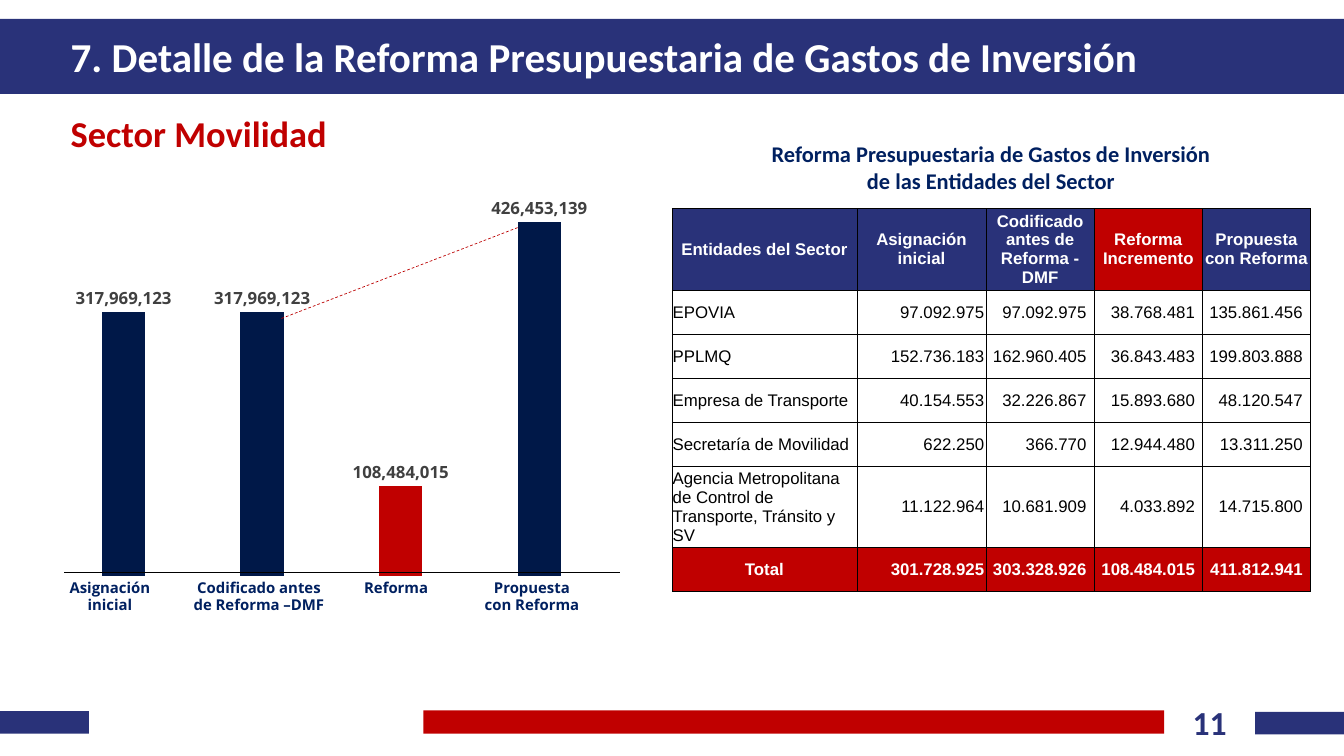
from dataclasses import dataclass

import lxml.etree
import pptx
import pptx.chart.data
import pptx.dml.color
import pptx.enum.chart
import pptx.enum.dml
import pptx.enum.shapes
import pptx.enum.text
import pptx.oxml.ns
import pptx.util

ALIGN = pptx.enum.text.PP_ALIGN
MID = pptx.enum.text.MSO_ANCHOR.MIDDLE
TOP = pptx.enum.text.MSO_ANCHOR.TOP
qn = pptx.oxml.ns.qn


@dataclass(frozen=True)
class Theme:
    navy: str = "293279"
    red: str = "C00000"
    bar: str = "001848"
    ink: str = "002060"
    dash: str = "BC0000"
    gray: str = "404040"
    black: str = "000000"
    white: str = "FFFFFF"
    title: int = 44
    sector: int = 39
    page: int = 36
    head: int = 24
    cell: int = 18
    label: int = 16


@dataclass(frozen=True)
class Box:
    x: int
    y: int
    w: int
    h: int


@dataclass(frozen=True)
class Bar:
    box: Box
    color: str


@dataclass(frozen=True)
class Style:
    size: int
    color: str
    face: str = "Calibri"
    bold: bool = True
    align: ALIGN = ALIGN.LEFT


@dataclass(frozen=True)
class Rule:
    start: tuple[int, int]
    end: tuple[int, int]
    color: str
    dashed: bool = False


T = Theme()
BARS = [
    Bar(Box(605, 1015, 1058, 33), T.red),
    Bar(Box(0, 1016, 127, 32), T.navy),
    Bar(Box(1793, 1017, 127, 32), T.navy),
    Bar(Box(0, 27, 1920, 107), T.navy),
]
RULES = [
    Rule((402, 455), (740, 325), T.dash, True),
    Rule((92, 817), (886, 817), T.black),
]
COLS = [264, 185, 154, 155, 154]
ROWS = [116, 63, 63, 63, 63, 116, 63]
CELLS = [
    ["Entidades del Sector", "Asignación inicial", "Codificado antes de Reforma - DMF",
     "Reforma Incremento", "Propuesta con Reforma"],
    ["EPOVIA", "97.092.975", "97.092.975", "38.768.481", "135.861.456"],
    ["PPLMQ", "152.736.183", "162.960.405", "36.843.483", "199.803.888"],
    ["Empresa de Transporte", "40.154.553", "32.226.867", "15.893.680", "48.120.547"],
    ["Secretaría de Movilidad", "622.250", "366.770", "12.944.480", "13.311.250"],
    ["Agencia Metropolitana de Control de Transporte, Tránsito y SV",
     "11.122.964", "10.681.909", "4.033.892", "14.715.800"],
    ["Total", "301.728.925", "303.328.926", "108.484.015", "411.812.941"],
]
VALUES = [317969123, 317969123, 108484015, 426453139]
STOPS = [65, 278, 474, 668]
LABELS = ["\tAsignación\tCodificado antes\tReforma\tPropuesta",
          "\tinicial\tde Reforma –DMF\t\tcon Reforma"]


def px(n: int) -> pptx.util.Emu:
    return pptx.util.Emu(n * 9525)


def rgb(code: str) -> pptx.dml.color.RGBColor:
    return pptx.dml.color.RGBColor.from_string(code)


def span(box: Box) -> list:
    return [px(n) for n in (box.x, box.y, box.w, box.h)]


def tint(font, style: Style) -> None:
    font.size = pptx.util.Pt(style.size)
    font.name = style.face
    font.bold = style.bold
    font.color.rgb = rgb(style.color)


def write(frame, lines: list[str], style: Style, stops: list[int] = ()) -> None:
    for i, line in enumerate(lines):
        para = frame.paragraphs[0] if i == 0 else frame.add_paragraph()
        para.alignment = style.align
        if stops:
            tabs = lxml.etree.SubElement(para._p.get_or_add_pPr(), qn("a:tabLst"))
            for stop in stops:
                lxml.etree.SubElement(tabs, qn("a:tab"), pos=str(px(stop)), algn="ctr")
        run = para.add_run()
        run.text = line
        tint(run.font, style)


def pad(frame, side: int, edge: int, anchor) -> None:
    frame.word_wrap = True
    frame.auto_size = pptx.enum.text.MSO_AUTO_SIZE.NONE
    frame.vertical_anchor = anchor
    frame.margin_left = frame.margin_right = px(side)
    frame.margin_top = frame.margin_bottom = px(edge)


def note(shapes, box: Box, lines: list[str], style: Style, side: int = 17,
         edge: int = 9, anchor=MID, stops: list[int] = ()) -> None:
    frame = shapes.add_textbox(*span(box)).text_frame
    pad(frame, side, edge, anchor)
    write(frame, lines, style, stops)


def block(shapes, bar: Bar) -> None:
    shape = shapes.add_shape(pptx.enum.shapes.MSO_SHAPE.RECTANGLE, *span(bar.box))
    shape.shadow.inherit = False
    shape.fill.solid()
    shape.fill.fore_color.rgb = rgb(bar.color)
    shape.line.fill.background()


def stroke(shapes, rule: Rule) -> None:
    ends = [px(n) for n in rule.start + rule.end]
    line = shapes.add_connector(pptx.enum.shapes.MSO_CONNECTOR.STRAIGHT, *ends)
    line.line.color.rgb = rgb(rule.color)
    line.line.width = pptx.util.Pt(0.75)
    if rule.dashed:
        line.line.dash_style = pptx.enum.dml.MSO_LINE.DASH
    lxml.etree.SubElement(line._element.spPr, qn("a:effectLst"))


def frame_cell(cell) -> None:
    props = cell._tc.get_or_add_tcPr()
    for i, side in enumerate(("a:lnL", "a:lnR", "a:lnT", "a:lnB")):
        edge = lxml.etree.Element(qn(side), w=str(pptx.util.Pt(0.5)))
        fill = lxml.etree.SubElement(edge, qn("a:solidFill"))
        lxml.etree.SubElement(fill, qn("a:srgbClr"), val=T.black)
        props.insert(i, edge)


def grid(shapes, box: Box) -> None:
    table = shapes.add_table(len(ROWS), len(COLS), *span(box)).table
    table.first_row = table.horz_banding = False
    for col, wide in zip(table.columns, COLS):
        col.width = px(wide)
    for r, tall in enumerate(ROWS):
        table.rows[r].height = px(tall)
        head, total = r == 0, r == len(ROWS) - 1
        for c, text in enumerate(CELLS[r]):
            cell = table.cell(r, c)
            cell.vertical_anchor = MID
            cell.margin_left = cell.margin_right = cell.margin_top = px(1)
            cell.margin_bottom = 0
            if head or (total and c == 0):
                align = ALIGN.CENTER
            elif c == 0:
                align = ALIGN.LEFT
            else:
                align = ALIGN.RIGHT
                cell.margin_right = px(3 if c == 1 else 11)
            if head or total:
                cell.fill.solid()
                cell.fill.fore_color.rgb = rgb(T.red if total or c == 3 else T.navy)
            else:
                cell.fill.background()
            bold = head or total
            shade = T.white if bold else T.black
            write(cell.text_frame, [text], Style(T.cell, shade, "Arial", bold, align))
            frame_cell(cell)


def plot(shapes, box: Box) -> None:
    data = pptx.chart.data.CategoryChartData()
    data.categories = ["1", "2", "3", "4"]
    data.add_series("Series 1", VALUES)
    kind = pptx.enum.chart.XL_CHART_TYPE.COLUMN_CLUSTERED
    chart = shapes.add_chart(kind, *span(box), data).chart
    chart.has_legend = chart.has_title = False
    tint(chart.font, Style(10, T.black, "Open Sans", False))
    for axis in (chart.category_axis, chart.value_axis):
        axis.has_major_gridlines = False
        axis.visible = False
    chart.value_axis.minimum_scale = 0
    chart.value_axis.maximum_scale = 450000000
    bars = chart.plots[0]
    bars.vary_by_categories = False
    bars.gap_width = 219
    bars.overlap = -27
    series = bars.series[0]
    for fill, shade in ((series.format.fill, T.bar), (series.points[2].format.fill, T.red)):
        fill.solid()
        fill.fore_color.rgb = rgb(shade)
    tags = series.data_labels
    tags.show_value = True
    tags.position = pptx.enum.chart.XL_LABEL_POSITION.OUTSIDE_END
    tags.number_format = "#,##0"
    tags.number_format_is_linked = False
    tint(tags.font, Style(T.cell, T.gray, "Open Sans"))


def main() -> None:
    deck = pptx.Presentation()
    deck.slide_width, deck.slide_height = px(1920), px(1080)
    slide = deck.slides.add_slide(deck.slide_layouts[5])
    shapes = slide.shapes
    for bar in BARS:
        block(shapes, bar)

    title = shapes.title
    title.left, title.top, title.width, title.height = span(Box(84, 27, 1705, 107))
    pad(title.text_frame, 17, 9, MID)
    write(title.text_frame, ["7. Detalle de la Reforma Presupuestaria de Gastos de Inversión"],
          Style(T.title, T.white))
    shapes._spTree.append(title._element)

    note(shapes, Box(1663, 998, 130, 68), ["11"],
         Style(T.page, T.navy, align=ALIGN.CENTER), 10, 5, TOP)
    note(shapes, Box(84, 136, 618, 108), ["Sector Movilidad"], Style(T.sector, T.red))
    note(shapes, Box(960, 198, 911, 81),
         ["Reforma Presupuestaria de Gastos de Inversión", "de las Entidades del Sector"],
         Style(T.head, T.ink, align=ALIGN.CENTER))
    grid(shapes, Box(960, 298, sum(COLS), sum(ROWS)))
    plot(shapes, Box(61, 278, 825, 556))
    note(shapes, Box(92, 821, 803, 87), LABELS, Style(T.label, T.ink, "Open Sans"),
         0, 5, TOP, STOPS)
    for rule in RULES:
        stroke(shapes, rule)
    deck.save("out.pptx")


if __name__ == "__main__":
    main()
